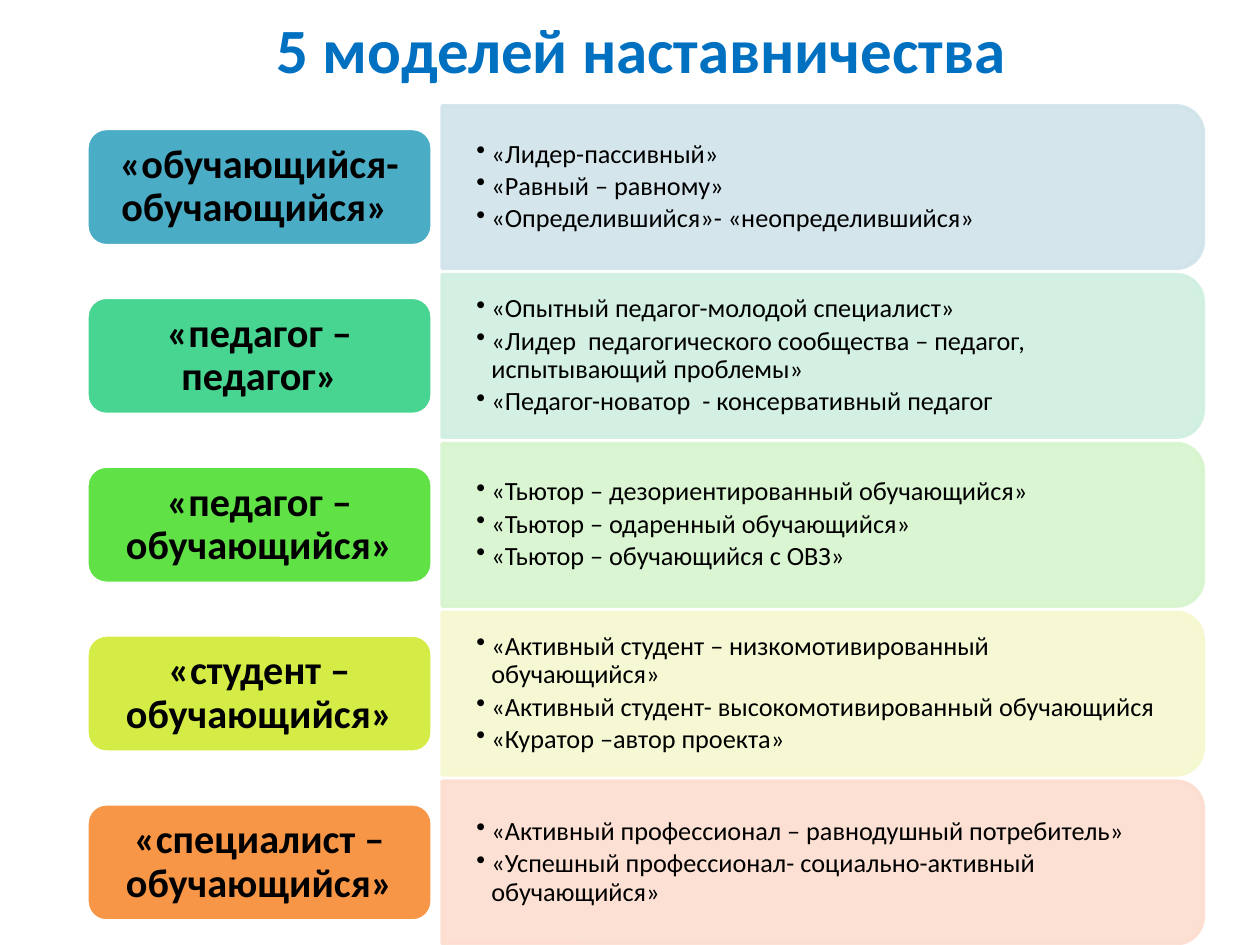
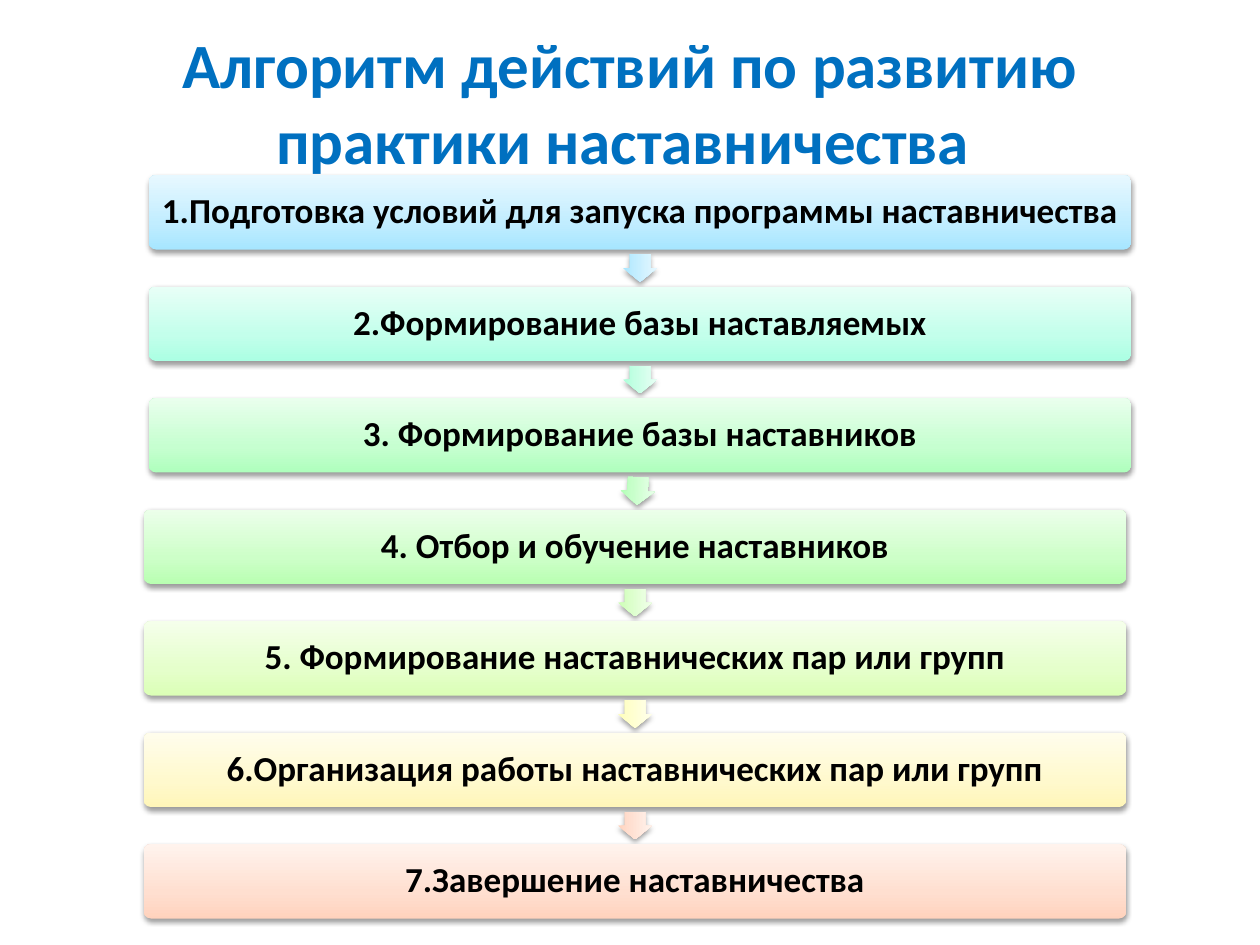
from copy import deepcopy
from math import atan2, degrees

from lxml import etree
from pptx import Presentation
from pptx.dml.color import RGBColor
from pptx.enum import shapes, text
from pptx.oxml import ns
from pptx.util import Inches, Pt

FONT = "Calibri"
TITLE_BLUE = RGBColor(0x00, 0x70, 0xC0)
BLACK = RGBColor(0x00, 0x00, 0x00)
WHITE = RGBColor(0xFF, 0xFF, 0xFF)
TEAL = RGBColor(0x4B, 0xAC, 0xC6)
MINT = RGBColor(0x48, 0xD4, 0x91)
GREEN = RGBColor(0x60, 0xE1, 0x46)
LIME = RGBColor(0xD5, 0xEC, 0x46)
ORANGE = RGBColor(0xF7, 0x96, 0x46)
PALE_TEAL = RGBColor(0xD0, 0xE3, 0xEA)
PALE_MINT = RGBColor(0xCF, 0xEF, 0xE1)
PALE_GREEN = RGBColor(0xD6, 0xF4, 0xCE)
PALE_LIME = RGBColor(0xF6, 0xF8, 0xCF)
PALE_ORANGE = RGBColor(0xFC, 0xDD, 0xCF)
STEP_COLORS = [RGBColor.from_string(code) for code in (
    "A7E6FF", "ABFFE3", "AFFFBD", "B9FFB2", "DBFFB6", "FFF6B9", "FFD2BD")]
ARROW_COLORS = [RGBColor.from_string(code) for code in (
    "A7E6FF", "ACFFD9", "B0FFB4", "CCFFB4", "FFFFB9", "FFD2BD")]
GRADIENT_TINTS = ((0, 0), (0.35, 0.29), (1, 0.73))

MODELS = [
    ("«обучающийся-обучающийся» ", TEAL, PALE_TEAL,
     ["«Лидер-пассивный»", "«Равный – равному»",
      "«Определившийся»- «неопределившийся»"]),
    ("«педагог – педагог»", MINT, PALE_MINT,
     ["«Опытный педагог-молодой специалист»",
      "«Лидер  педагогического сообщества – педагог, испытывающий проблемы»",
      "«Педагог-новатор  - консервативный педагог"]),
    ("«педагог – обучающийся»", GREEN, PALE_GREEN,
     ["«Тьютор – дезориентированный обучающийся»",
      "«Тьютор – одаренный обучающийся»", "«Тьютор – обучающийся с ОВЗ»"]),
    ("«студент – обучающийся»", LIME, PALE_LIME,
     ["«Активный студент – низкомотивированный обучающийся»",
      "«Активный студент- высокомотивированный обучающийся",
      "«Куратор –автор проекта»"]),
    ("«специалист – обучающийся»", ORANGE, PALE_ORANGE,
     ["«Активный профессионал – равнодушный потребитель»",
      "«Успешный профессионал- социально-активный обучающийся»"]),
]
STEPS = [
    "1.Подготовка условий для запуска программы наставничества",
    "2.Формирование базы наставляемых",
    "3. Формирование базы наставников",
    "4. Отбор и обучение наставников",
    "5. Формирование наставнических пар или групп",
    "6.Организация работы наставнических пар или групп",
    "7.Завершение наставничества",
]


def write(shape, lines, size, bold=False, insets=(0.1, 0.05), spacing=None,
          align=text.PP_ALIGN.CENTER):
    frame = shape.text_frame
    frame.text = "\n".join(lines)
    frame.word_wrap = True
    frame.vertical_anchor = text.MSO_ANCHOR.MIDDLE
    frame.margin_left = frame.margin_right = Inches(insets[0])
    frame.margin_top = frame.margin_bottom = Inches(insets[1])
    for paragraph in frame.paragraphs:
        paragraph.alignment = align
        paragraph.line_spacing = spacing
        for run in paragraph.runs:
            run.font.name = FONT
            run.font.size = Pt(size)
            run.font.bold = bold
            run.font.color.rgb = BLACK
    return frame


def add_shape(slide, kind, left, top, width, height, rotation=0):
    shape = slide.shapes.add_shape(
        kind, Inches(left), Inches(top), Inches(width), Inches(height))
    shape.rotation = rotation
    shape.shadow.inherit = False
    return shape


def add_text_box(slide, left, top, width, height):
    return slide.shapes.add_textbox(
        Inches(left), Inches(top), Inches(width), Inches(height))


def add_title(slide, title, left, top, width, height):
    frame = write(add_text_box(slide, left, top, width, height), [title], 36, True)
    frame.paragraphs[0].runs[0].font.color.rgb = TITLE_BLUE


def fill_and_outline(shape, fill_color, line_color):
    shape.fill.solid()
    shape.fill.fore_color.rgb = fill_color
    shape.line.color.rgb = line_color
    shape.line.width = Pt(2)


def add_bullets(frame):
    for paragraph in frame.paragraphs:
        paragraph.space_after = Pt(2.25)
        properties = paragraph._p.get_or_add_pPr()
        properties.set("marL", str(Inches(0.12)))
        properties.set("indent", str(-Inches(0.12)))
        etree.SubElement(properties, ns.qn("a:buChar")).set("char", "•")


def add_model_row(slide, left, top, label, color, pale_color, examples):
    height, band_width, band_left = 1.29, 6.04, left + 2.82
    band = add_shape(
        slide, shapes.MSO_SHAPE.ROUND_2_SAME_RECTANGLE,
        band_left + (band_width - height) / 2, top + (height - band_width) / 2,
        height, band_width, 90)
    fill_and_outline(band, pale_color, pale_color)
    for color_element in band.element.spPr.iter(ns.qn("a:srgbClr")):
        etree.SubElement(color_element, ns.qn("a:alpha")).set("val", "90000")

    box = add_text_box(slide, band_left, top + 0.06, 5.98, 1.17)
    add_bullets(write(box, examples, 15, insets=(0.27, 0.14), spacing=0.9,
                      align=text.PP_ALIGN.LEFT))

    tab = add_shape(slide, shapes.MSO_SHAPE.ROUNDED_RECTANGLE,
                    left, top + 0.18, 2.74, 0.93)
    fill_and_outline(tab, color, WHITE)
    write(tab, [label], 23, True, spacing=0.9)


def tint(color, amount):
    return RGBColor(*(round(part + (255 - part) * amount) for part in color))


def add_glossy_fill(shape, color):
    shape.line.fill.background()
    shape.fill.gradient()
    shape.fill.gradient_angle = 90
    stop_list = shape.element.spPr.find(".//" + ns.qn("a:gsLst"))
    stop_list.append(deepcopy(stop_list[-1]))
    for stop, (position, amount) in zip(shape.fill.gradient_stops, GRADIENT_TINTS):
        stop.position = position
        stop.color.rgb = tint(color, amount)

    effects = shape.element.spPr.find(ns.qn("a:effectLst"))
    shadow = etree.SubElement(
        effects, ns.qn("a:outerShdw"), blurRad=str(Pt(3.1)), dist=str(Pt(1.6)),
        dir="5400000", rotWithShape="0")
    shadow_color = etree.SubElement(shadow, ns.qn("a:srgbClr"), val=str(BLACK))
    etree.SubElement(shadow_color, ns.qn("a:alpha"), val="38000")


def add_step(slide, left, top, width, height, label, color):
    bar = add_shape(slide, shapes.MSO_SHAPE.ROUNDED_RECTANGLE,
                    left, top, width, height)
    bar.adjustments[0] = 0.1
    add_glossy_fill(bar, color)
    write(bar, [label], 20, True, insets=(0.08, 0.08), spacing=0.9)


def add_step_arrow(slide, center_x, center_y, rotation, color):
    length, breadth = 0.22, 0.27
    arrow = add_shape(slide, shapes.MSO_SHAPE.RIGHT_ARROW, center_x - length / 2,
                      center_y - breadth / 2, length, breadth, rotation)
    arrow.adjustments[0] = 0.6
    arrow.adjustments[1] = 0.5
    add_glossy_fill(arrow, color)


def build_models_slide(slide):
    add_title(slide, "5 моделей наставничества", 0.59, 0, 9, 0.76)
    for row, model in enumerate(MODELS):
        add_model_row(slide, 0.69, 0.84 + 1.34 * row, *model)


def build_algorithm_slide(slide):
    add_title(slide, "Алгоритм действий по развитию практики наставничества ",
              0.5, 0.3, 9, 1.01)
    first_top, pitch, width, height = 1.39, 0.885, 7.8, 0.59
    lefts = [1.18] * 3 + [1.14] * 4
    for index, label in enumerate(STEPS):
        top = first_top + pitch * index
        add_step(slide, lefts[index], top, width, height, label, STEP_COLORS[index])
        if index < len(ARROW_COLORS):
            shift = lefts[index] - lefts[index + 1]
            add_step_arrow(slide, lefts[index] + (width - shift) / 2,
                           top + (height + pitch) / 2,
                           90 + degrees(atan2(shift, pitch)), ARROW_COLORS[index])


def main():
    presentation = Presentation()
    presentation.slide_width = Inches(10)
    presentation.slide_height = Inches(7.5)
    for build in (build_models_slide, build_algorithm_slide):
        build(presentation.slides.add_slide(presentation.slide_layouts[6]))
    presentation.save("out.pptx")


if __name__ == "__main__":
    main()
